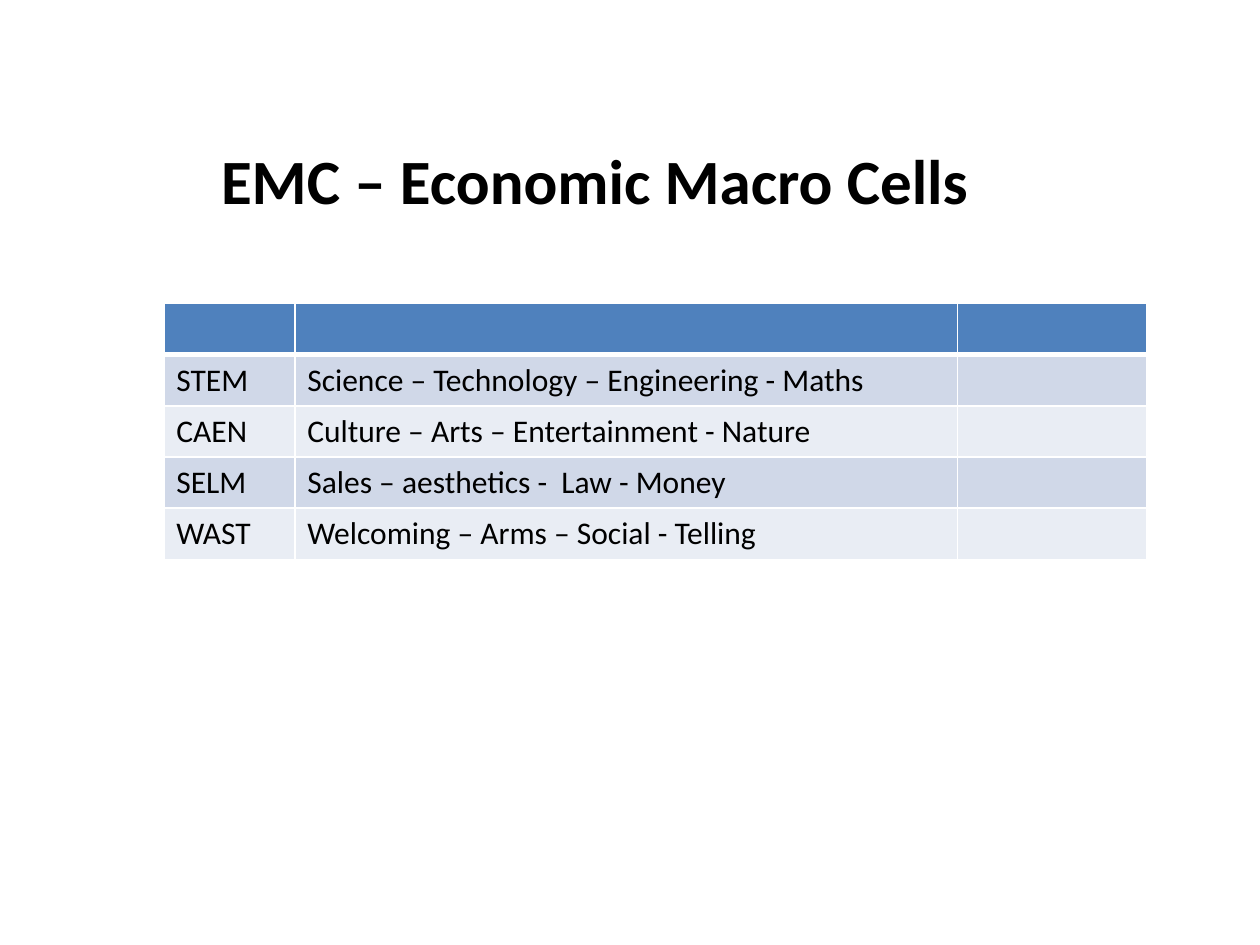
from dataclasses import dataclass

from lxml import etree
from pptx import Presentation
from pptx.dml.color import RGBColor
from pptx.enum.text import MSO_ANCHOR, MSO_AUTO_SIZE, PP_ALIGN
from pptx.oxml.ns import qn
from pptx.slide import Slide
from pptx.table import _Cell
from pptx.util import Inches, Pt

CENTER = PP_ALIGN.CENTER
LEFT = PP_ALIGN.LEFT
TOP = MSO_ANCHOR.TOP
FIT_SHAPE = MSO_AUTO_SIZE.SHAPE_TO_FIT_TEXT

BLACK = RGBColor(0x00, 0x00, 0x00)
WHITE = RGBColor(0xFF, 0xFF, 0xFF)
HEADER_BLUE = RGBColor(0x4F, 0x81, 0xBD)
BAND_DARK = RGBColor(0xD0, 0xD8, 0xE8)
BAND_LIGHT = RGBColor(0xE9, 0xED, 0xF4)

FONT = "Calibri"
TITLE_ONLY_LAYOUT = 5
COLUMN_WIDTHS = (1.04, 5.26, 1.5)
TABLE_HEIGHT = 2.03
THIN, THICK = 1, 3


@dataclass(frozen=True)
class MacroCell:
    code: str
    fields: str


MACRO_CELLS = (
    MacroCell("STEM", "Science – Technology – Engineering - Maths"),
    MacroCell("CAEN", "Culture – Arts – Entertainment - Nature"),
    MacroCell("SELM", "Sales – aesthetics -  Law - Money"),
    MacroCell("WAST", "Welcoming – Arms – Social - Telling"),
)


def set_borders(cell: _Cell, top: int, bottom: int) -> None:
    """Draw white borders; their elements must come before the cell fill."""
    properties = cell._tc.get_or_add_tcPr()
    sides = (("a:lnL", THIN), ("a:lnR", THIN), ("a:lnT", top), ("a:lnB", bottom))
    for position, (tag, width) in enumerate(sides):
        line = etree.Element(qn(tag), w=str(Pt(width)))
        fill = etree.SubElement(line, qn("a:solidFill"))
        etree.SubElement(fill, qn("a:srgbClr"), val=str(WHITE))
        properties.insert(position, line)


def fill_cell(cell: _Cell, text: str, row: int) -> None:
    cell.fill.solid()
    if row == 0:
        cell.fill.fore_color.rgb = HEADER_BLUE
    else:
        cell.fill.fore_color.rgb = BAND_DARK if row % 2 else BAND_LIGHT
    set_borders(cell, THICK if row == 1 else THIN, THICK if row == 0 else THIN)
    cell.text_frame.text = text
    font = cell.text_frame.paragraphs[0].font
    font.name, font.size, font.color.rgb = FONT, Pt(18), BLACK
    cell.text_frame.paragraphs[0].alignment = LEFT


def add_title(slide: Slide, text: str) -> None:
    title = slide.shapes.title
    title.left, title.top = Inches(1.06), Inches(1.07)
    title.width, title.height = Inches(7.32), Inches(0.71)
    frame = title.text_frame
    frame.text = text
    frame.word_wrap = True
    frame.auto_size = FIT_SHAPE
    frame.vertical_anchor = TOP
    frame.paragraphs[0].alignment = CENTER
    font = frame.paragraphs[0].runs[0].font
    font.name, font.size, font.bold = FONT, Pt(36), True
    font.color.rgb = BLACK


def add_macro_cell_table(slide: Slide, macro_cells: tuple[MacroCell, ...]) -> None:
    # The header row and the last column are blank
    rows = [("", "", "")] + [(item.code, item.fields, "") for item in macro_cells]
    table = slide.shapes.add_table(
        len(rows), len(COLUMN_WIDTHS), Inches(1.3), Inches(2.41),
        Inches(sum(COLUMN_WIDTHS)), Inches(TABLE_HEIGHT),
    ).table
    for column, width in zip(table.columns, COLUMN_WIDTHS):
        column.width = Inches(width)
    for row, texts in enumerate(rows):
        for column, text in enumerate(texts):
            fill_cell(table.cell(row, column), text, row)


def main() -> None:
    presentation = Presentation()
    presentation.slide_width, presentation.slide_height = Inches(10), Inches(7.5)
    layout = presentation.slide_layouts[TITLE_ONLY_LAYOUT]
    slide = presentation.slides.add_slide(layout)
    add_title(slide, "EMC – Economic Macro Cells")
    add_macro_cell_table(slide, MACRO_CELLS)
    presentation.save("out.pptx")


if __name__ == "__main__":
    main()
